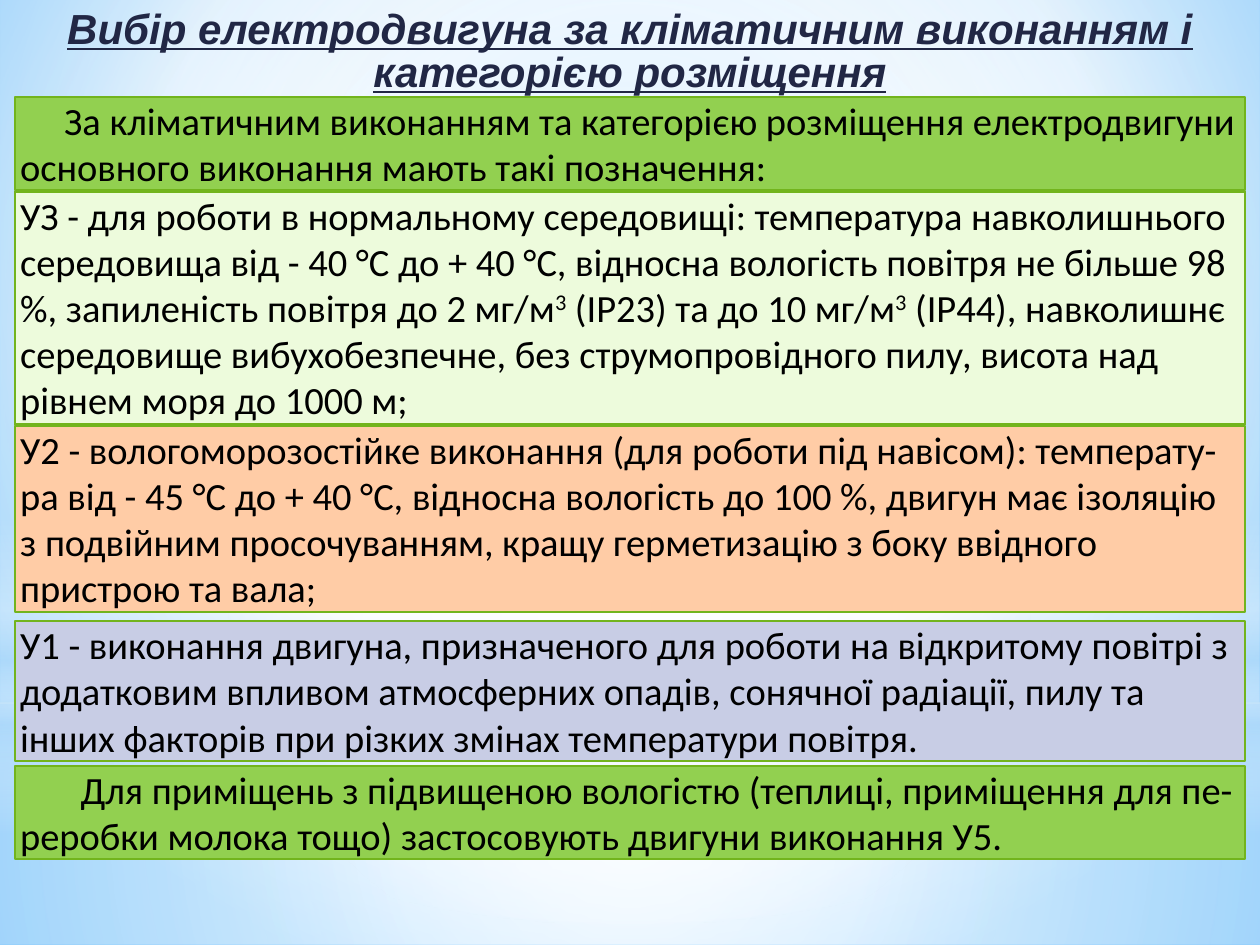
from dataclasses import dataclass

from lxml import etree
from pptx import Presentation
from pptx.dml.color import RGBColor
from pptx.enum.shapes import MSO_SHAPE
from pptx.enum.text import MSO_ANCHOR, MSO_AUTO_SIZE, PP_ALIGN
from pptx.oxml.ns import qn
from pptx.util import Inches, Pt

RECT = MSO_SHAPE.RECTANGLE
OVAL = MSO_SHAPE.OVAL
TOP = MSO_ANCHOR.TOP
GROW = MSO_AUTO_SIZE.SHAPE_TO_FIT_TEXT
LEFT = PP_ALIGN.LEFT
CENTER = PP_ALIGN.CENTER
EDGE, SPAN = 0.12, 9.76
GREEN = "92D050"
SKY = "B4DCFA"
WHITE = "FFFFFF"
MID = (50, 50, 50, 50)


@dataclass
class Stop:
    pos: int
    tint: str
    alpha: int = 100


@dataclass
class Veil:
    kind: int
    top: float
    height: float
    stops: list[Stop]
    focus: tuple | None = MID


@dataclass
class Box:
    top: float
    height: float
    tint: str
    text: str
    indent: float = 0


VEILS = [
    Veil(RECT, 5.58, 1.92, [Stop(0, WHITE, 91), Stop(37, WHITE, 76), Stop(100, SKY, 79)]),
    Veil(RECT, 0, 5.58, [Stop(0, WHITE, 89), Stop(48, WHITE, 62), Stop(100, SKY, 79)]),
    Veil(RECT, 4.12, 2.5, [Stop(0, WHITE, 0), Stop(29, WHITE, 30), Stop(45, SKY, 40),
                           Stop(55, WHITE, 26), Stop(65, SKY, 60), Stop(100, WHITE, 0)], None),
    Veil(OVAL, 1.75, 5.58, [Stop(0, WHITE), Stop(56, WHITE, 0)]),
]
BOXES = [
    Box(0.77, 0.74, GREEN, "За кліматичним виконанням та категорією розміщення електродвигуни "
        "основного виконання мають такі позначення:", 0.35),
    Box(1.52, 1.85, "EDFBDC", "УЗ - для роботи в нормальному середовищі: температура навколишнього "
        "середовища від - 40 °С до + 40 °С, відносна вологість повітря не більше 98 %, "
        "запиленість повітря до 2 мг/м^3^ (ІР23) та до 10 мг/м^3^ (ІР44), навколишнє "
        "середовище вибухобезпечне, без струмопровідного пилу, висота над рівнем моря до 1000 м;"),
    Box(3.38, 1.48, "FFCCA6", "У2 - вологоморозостійке виконання (для роботи під навісом): "
        "температу-ра від - 45 °С до + 40 °С, відносна вологість до 100 %, двигун має ізоляцію "
        "з подвійним просочуванням, кращу герметизацію з боку ввідного пристрою та вала;"),
    Box(4.93, 1.11, "C8CDE5", "У1 - виконання двигуна, призначеного для роботи на відкритому "
        "повітрі з додатковим впливом атмосферних опадів, сонячної радіації, пилу та інших "
        "факторів при різких змінах температури повітря."),
    Box(6.08, 0.74, GREEN, "Для приміщень з підвищеною вологістю (теплиці, приміщення для "
        "пе-реробки молока тощо) застосовують двигуни виконання У5.", 0.48),
]


def color(code: str) -> RGBColor:
    return RGBColor.from_string(code)


def blend(owner, stops: list[Stop], focus: tuple | None) -> None:
    grad = etree.Element(qn("a:gradFill"), rotWithShape="1")
    marks = etree.SubElement(grad, qn("a:gsLst"))
    for stop in stops:
        mark = etree.SubElement(marks, qn("a:gs"), pos=str(stop.pos * 1000))
        tint = etree.SubElement(mark, qn("a:srgbClr"), val=stop.tint)
        if stop.alpha < 100:
            etree.SubElement(tint, qn("a:alpha"), val=str(stop.alpha * 1000))
    if focus:
        way = etree.SubElement(grad, qn("a:path"), path="circle")
        sides = {side: str(part * 1000) for side, part in zip("ltrb", focus)}
        etree.SubElement(way, qn("a:fillToRect"), **sides)
    else:
        etree.SubElement(grad, qn("a:lin"), ang="5400000", scaled="0")
    solid = next(owner.iter(qn("a:solidFill")))
    solid.getparent().replace(solid, grad)


def veil(slide, item: Veil) -> None:
    shape = slide.shapes.add_shape(item.kind, 0, Inches(item.top), Inches(10), Inches(item.height))
    shape.shadow.inherit = False
    shape.line.fill.background()
    shape.fill.solid()
    shape.fill.fore_color.rgb = color(WHITE)
    blend(shape._element.spPr, item.stops, item.focus)


def frame(shape, side: float):
    text = shape.text_frame
    text.word_wrap = True
    text.auto_size = GROW
    text.vertical_anchor = TOP
    text.margin_left = text.margin_right = Inches(side)
    text.margin_top = text.margin_bottom = 0
    return text


def style(font, face: str, size: int, tint: str) -> None:
    font.name, font.size = face, Pt(size)
    font.color.rgb = color(tint)


def head(shape, words: str) -> None:
    shape.left, shape.top = Inches(EDGE), Inches(0.08)
    shape.width, shape.height = Inches(SPAN), Inches(0.69)
    text = frame(shape, 0)
    text.text = words
    para = text.paragraphs[0]
    para.alignment = CENTER
    para.line_spacing = 0.85
    font = para.runs[0].font
    style(font, "Arial", 24, "212745")
    font.bold = font.italic = font.underline = True


def panel(slide, item: Box) -> None:
    shape = slide.shapes.add_shape(RECT, Inches(EDGE), Inches(item.top),
                                   Inches(SPAN), Inches(item.height))
    shape.shadow.inherit = False
    shape.fill.solid()
    shape.fill.fore_color.rgb = color(item.tint)
    shape.line.color.rgb = color("72B41D")
    shape.line.width = Pt(1.25)
    para = frame(shape, 0.04).paragraphs[0]
    para.alignment = LEFT
    if item.indent:
        para._p.get_or_add_pPr().set("indent", str(Inches(item.indent)))
    for order, part in enumerate(item.text.split("^")):
        run = para.add_run()
        run.text = part
        style(run.font, "Calibri", 22, "000000")
        if order % 2:
            run._r.get_or_add_rPr().set("baseline", "30000")


def main() -> None:
    deck = Presentation()
    deck.slide_width, deck.slide_height = Inches(10), Inches(7.5)
    slide = deck.slides.add_slide(deck.slide_layouts[5])
    back = slide.background.fill
    back.solid()
    back.fore_color.rgb = color(WHITE)
    blend(slide._element, [Stop(0, "9ED5FF"), Stop(60, WHITE), Stop(100, "5BB9FF")],
          (20, 10, 20, 60))
    for item in VEILS:
        veil(slide, item)
    title = slide.shapes.title
    head(title, "Вибір електродвигуна за кліматичним виконанням і категорією розміщення")
    slide.shapes._spTree.append(title._element)
    for item in BOXES:
        panel(slide, item)
    deck.save("out.pptx")


if __name__ == "__main__":
    main()
